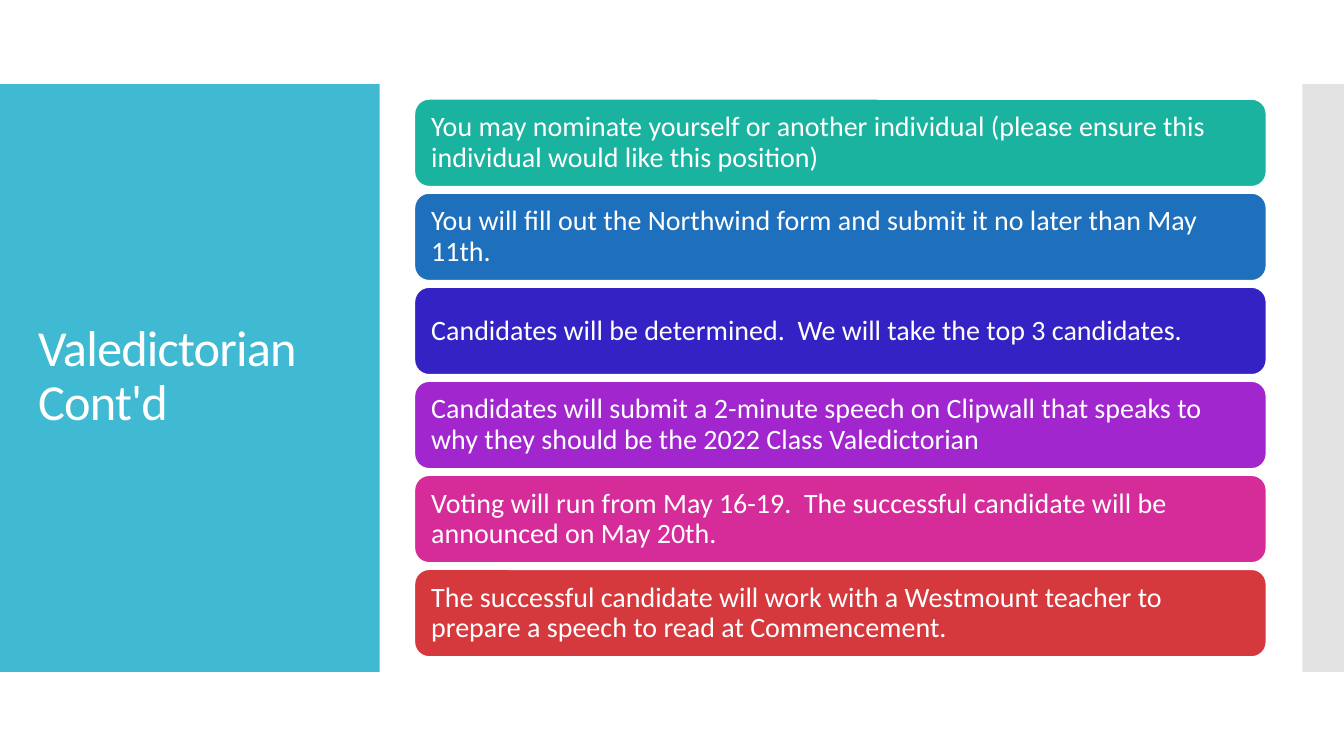
from lxml.etree import SubElement
from pptx import Presentation
from pptx.dml.color import RGBColor
from pptx.enum.shapes import MSO_SHAPE
from pptx.enum.text import MSO_ANCHOR, MSO_AUTO_SIZE, PP_ALIGN
from pptx.oxml.ns import qn
from pptx.util import Cm, Pt

FONT = "Calibri"
WHITE = RGBColor(0xFF, 0xFF, 0xFF)
PANEL_BLUE = RGBColor(0x40, 0xBA, 0xD2)
STRIP_GREY = RGBColor(0xC8, 0xC8, 0xC8)
TEAL = RGBColor(0x1A, 0xB3, 0x9F)
BLUE = RGBColor(0x1E, 0x6F, 0xBC)
INDIGO = RGBColor(0x34, 0x22, 0xC5)
PURPLE = RGBColor(0xA1, 0x26, 0xCE)
PINK = RGBColor(0xD5, 0x2C, 0x99)
RED = RGBColor(0xD5, 0x39, 0x3D)

STEPS = [
    (TEAL, "You may nominate yourself or another individual "
           "(please ensure this individual would like this position)"),
    (BLUE, "You will fill out the Northwind form and submit it "
           "no later than May 11th."),
    (INDIGO, "Candidates will be determined.  We will take the top 3 candidates."),
    (PURPLE, "Candidates will submit a 2-minute speech on Clipwall that speaks "
             "to why they should be the 2022 Class Valedictorian"),
    (PINK, "Voting will run from May 16-19.  The successful candidate will be "
           "announced on May 20th."),
    (RED, "The successful candidate will work with a Westmount teacher to "
          "prepare a speech to read at Commencement."),
]

SLIDE_WIDTH, SLIDE_HEIGHT = Cm(33.87), Cm(19.05)
PANEL_TOP, PANEL_HEIGHT = Cm(2.12), Cm(14.81)
STEP_LEFT, STEP_TOP = Cm(10.45), Cm(2.5)
STEP_WIDTH, STEP_HEIGHT = Cm(21.46), Cm(2.2)
STEP_PITCH = Cm(2.37)


def write_text(shape, text, size, margin, spacing=None):
    """Write one left-aligned white paragraph, centred vertically."""
    frame = shape.text_frame
    frame.word_wrap = True
    frame.auto_size = MSO_AUTO_SIZE.NONE
    frame.vertical_anchor = MSO_ANCHOR.MIDDLE
    frame.margin_left = frame.margin_right = margin
    frame.margin_top = frame.margin_bottom = Cm(0.13)
    paragraph = frame.paragraphs[0]
    paragraph.alignment = PP_ALIGN.LEFT
    paragraph.line_spacing = 0.9
    run = paragraph.add_run()
    run.text = text
    run.font.name = FONT
    run.font.size = Pt(size)
    run.font.color.rgb = WHITE
    if spacing is not None:
        for properties in shape.element.iter(qn("a:rPr")):
            properties.set("spc", str(round(spacing * 100)))


def add_block(slide, kind, left, top, width, height, color):
    shape = slide.shapes.add_shape(kind, left, top, width, height)
    shape.shadow.inherit = False
    shape.fill.solid()
    shape.fill.fore_color.rgb = color
    shape.line.fill.background()
    return shape


def add_panel(slide, left, width, color, opacity=None):
    """Add a side panel behind the title."""
    panel = add_block(slide, MSO_SHAPE.RECTANGLE, left, PANEL_TOP,
                      width, PANEL_HEIGHT, color)
    if opacity is not None:
        fill_color = next(panel.element.iter(qn("a:srgbClr")))
        SubElement(fill_color, qn("a:alpha"), val=str(opacity * 1000))
    slide.shapes.title.element.addprevious(panel.element)


def add_title(slide, text):
    title = slide.shapes.title
    title.left, title.top = Cm(0.71), Cm(3.12)
    title.width, title.height = Cm(8.18), Cm(12.78)
    write_text(title, text, size=36, margin=Cm(0.25), spacing=-0.6)


def add_step(slide, index, color, text):
    step = add_block(slide, MSO_SHAPE.ROUNDED_RECTANGLE, STEP_LEFT,
                     STEP_TOP + index * STEP_PITCH, STEP_WIDTH, STEP_HEIGHT, color)
    step.line.color.rgb = WHITE
    step.line.width = Pt(0.85)
    write_text(step, text, size=20, margin=Cm(0.31))


def main():
    presentation = Presentation()
    presentation.slide_width = SLIDE_WIDTH
    presentation.slide_height = SLIDE_HEIGHT
    slide = presentation.slides.add_slide(presentation.slide_layouts[5])

    # Side panels and title
    add_panel(slide, 0, Cm(9.57), PANEL_BLUE)
    add_panel(slide, Cm(32.82), Cm(1.05), STRIP_GREY, opacity=50)
    add_title(slide, "Valedictorian Cont'd")

    # Steps of the nomination
    for index, (color, text) in enumerate(STEPS):
        add_step(slide, index, color, text)

    presentation.save("out.pptx")


if __name__ == "__main__":
    main()
